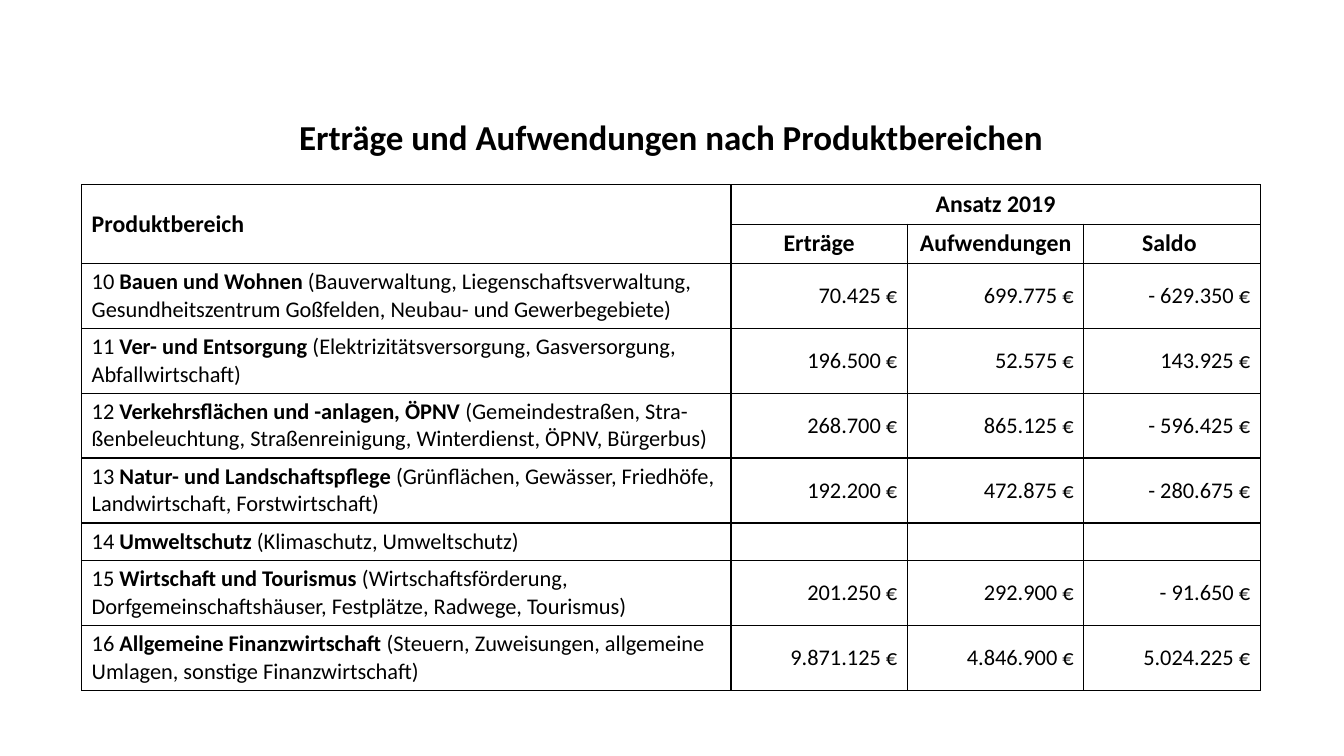
from pptx import Presentation
from pptx.dml.color import RGBColor
from pptx.enum.text import MSO_ANCHOR, PP_ALIGN
from pptx.oxml.ns import qn
from pptx.util import Inches, Pt
from lxml.etree import SubElement

COLORS = {"ink": "000000"}
COLUMN_WIDTHS = [6.44, 1.75, 1.75, 1.75]
HEADING_HEIGHTS = [0.52, 0.2, 0.39, 0.39]
AREAS = [
    ("10", "Bauen und Wohnen",
     "(Bauverwaltung, Liegenschaftsverwaltung, Gesundheitszentrum Goßfelden, Neubau- und Gewerbegebiete)",
     ["70.425 €", "699.775 €", "- 629.350 €"], 0.64),
    ("11", "Ver- und Entsorgung",
     "(Elektrizitätsversorgung, Gasversorgung, Abfallwirtschaft)",
     ["196.500 €", "52.575 €", "143.925 €"], 0.64),
    ("12", "Verkehrsflächen und -anlagen, ÖPNV",
     "(Gemeindestraßen, Stra-ßenbeleuchtung, Straßenreinigung, Winterdienst, ÖPNV, Bürgerbus)",
     ["268.700 €", "865.125 €", "- 596.425 €"], 0.64),
    ("13", "Natur- und Landschaftspflege",
     "(Grünflächen, Gewässer, Friedhöfe, Landwirtschaft, Forstwirtschaft)",
     ["192.200 €", "472.875 €", "- 280.675 €"], 0.64),
    ("14", "Umweltschutz", "(Klimaschutz, Umweltschutz)", ["", "", ""], 0.37),
    ("15", "Wirtschaft und Tourismus",
     "(Wirtschaftsförderung, Dorfgemeinschaftshäuser, Festplätze, Radwege, Tourismus)",
     ["201.250 €", "292.900 €", "- 91.650 €"], 0.64),
    ("16", "Allgemeine Finanzwirtschaft",
     "(Steuern, Zuweisungen, allgemeine Umlagen, sonstige Finanzwirtschaft)",
     ["9.871.125 €", "4.846.900 €", "5.024.225 €"], 0.64),
]


def add_text(para, text, size=16, bold=False, color="ink", font="Calibri"):
    if not text:
        SubElement(para._p, qn("a:endParaRPr"), sz=str(size * 100))
        return
    span = para.add_run()
    span.text = text
    span.font.name = font
    span.font.size = Pt(size)
    span.font.bold = bold
    span.font.color.rgb = RGBColor.from_string(COLORS[color])


class BudgetSlide:
    def __init__(self, deck):
        self.slide = deck.slides.add_slide(deck.slide_layouts[6])

    def add_table(self, left, top, widths, heights):
        frame = self.slide.shapes.add_table(
            len(heights), len(widths), Inches(left), Inches(top),
            Inches(sum(widths)), Inches(sum(heights)))
        self.table = frame.table
        self.table.first_row = False
        self.table.horz_banding = False
        for column, width in zip(self.table.columns, widths):
            column.width = Inches(width)
        for row, height in zip(self.table.rows, heights):
            row.height = Inches(height)

    def merge(self, first, last):
        self.table.cell(*first).merge(self.table.cell(*last))

    def fill_cell(self, row, column, spans, align=PP_ALIGN.LEFT):
        cell = self.table.cell(row, column)
        cell.vertical_anchor = MSO_ANCHOR.MIDDLE
        para = cell.text_frame.paragraphs[0]
        para.alignment = align
        for text, style in spans:
            add_text(para, text, **style)

    def style_cell(self, cell, sides):
        properties = cell._tc.get_or_add_tcPr()
        for side in "LRTB":
            line = SubElement(properties, qn(f"a:ln{side}"), w=str(Pt(1)))
            if side in sides:
                fill = SubElement(line, qn("a:solidFill"))
                SubElement(fill, qn("a:srgbClr"), val=COLORS["ink"])
            else:
                SubElement(line, qn("a:noFill"))
        cell.fill.background()


def main():
    deck = Presentation()
    deck.slide_width, deck.slide_height = Inches(13.33), Inches(7.5)
    budget = BudgetSlide(deck)
    heights = HEADING_HEIGHTS + [area[-1] for area in AREAS]
    budget.add_table(0.81, 1.11, COLUMN_WIDTHS, heights)
    for first, last in [((0, 0), (0, 3)), ((1, 1), (1, 3)),
                        ((2, 0), (3, 0)), ((2, 1), (2, 3))]:
        budget.merge(first, last)

    header = {"size": 17, "bold": True}
    budget.fill_cell(0, 0, [("Erträge und Aufwendungen nach Produktbereichen",
                             {"size": 25, "bold": True})], PP_ALIGN.CENTER)
    budget.fill_cell(2, 0, [("Produktbereich", header)])
    budget.fill_cell(2, 1, [("Ansatz 2019", header)], PP_ALIGN.CENTER)
    for column, label in enumerate(["Erträge", "Aufwendungen", "Saldo "], 1):
        budget.fill_cell(3, column, [(label, header)], PP_ALIGN.CENTER)

    for row, (number, name, details, amounts, _) in enumerate(AREAS, len(HEADING_HEIGHTS)):
        budget.fill_cell(row, 0, [(f"{number} ", {}), (name, {"bold": True}), (f" {details}", {})])
        for column, amount in enumerate(amounts, 1):
            budget.fill_cell(row, column, [(amount, {})], PP_ALIGN.RIGHT)

    for row in range(len(heights)):
        sides = {0: "", 1: "B"}.get(row, "LRTB")
        for column in range(len(COLUMN_WIDTHS)):
            cell = budget.table.cell(row, column)
            budget.style_cell(cell, sides)
            if row == 1:
                cell.margin_top = cell.margin_bottom = 0
                add_text(cell.text_frame.paragraphs[0], "", size=8)

    deck.save("out.pptx")


if __name__ == "__main__":
    main()
